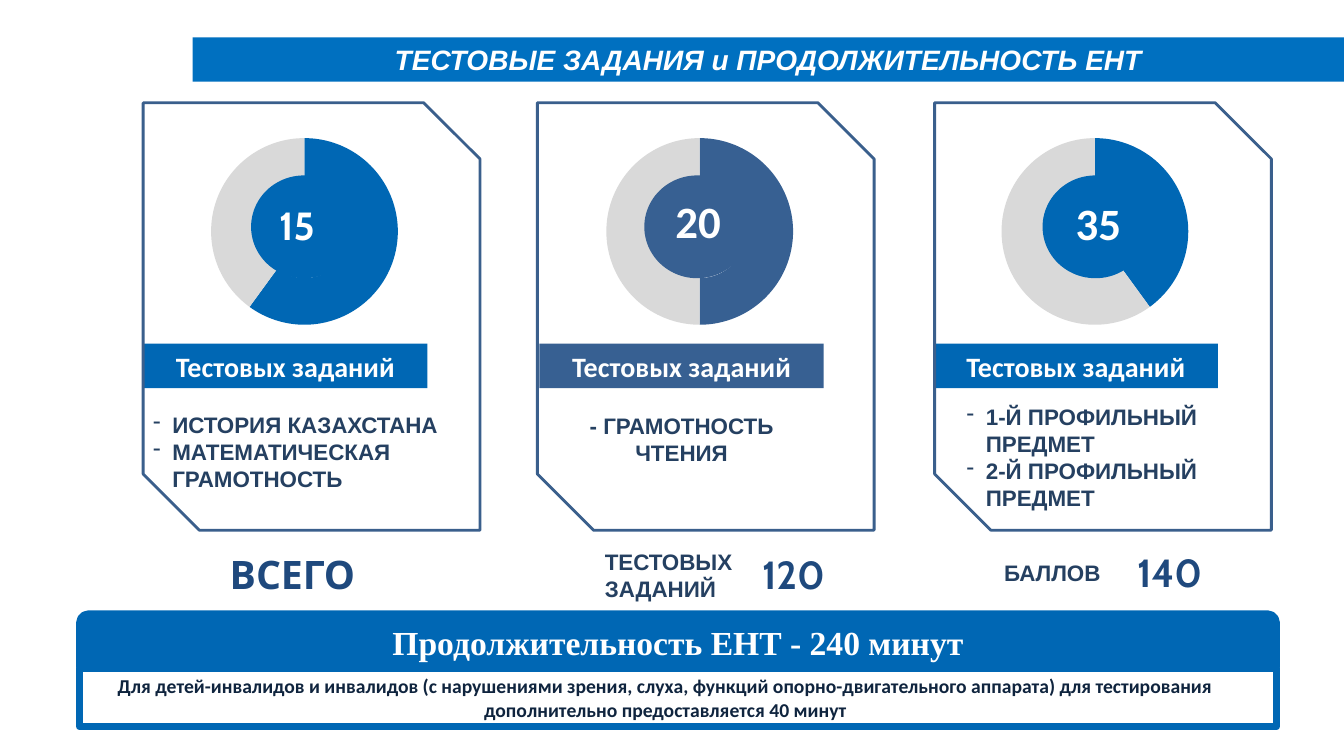
from lxml import etree
from pptx import Presentation
from pptx import util as u
from pptx.chart.data import CategoryChartData
from pptx.dml.color import RGBColor
from pptx.enum import chart as charts, shapes, text
from pptx.oxml import parse_xml
from pptx.oxml.ns import qn

# Content
TITLE = "ТЕСТОВЫЕ ЗАДАНИЯ и ПРОДОЛЖИТЕЛЬНОСТЬ ЕНТ"
BANNER = "Тестовых заданий"
BLUE, SLATE, GREY, WHITE = "0067B4", "376092", "D9D9D9", "FFFFFF"
NAVY, TOTAL, INK, EDGE = "254061", "1F497D", "0F243E", "3A5F8C"

# Number box and subject box are left, top, width, height
PANELS = [
    dict(left=1.42, banner=1.42, ring=2.07, disc=2.49, color=BLUE, share=60,
         number=("15", "Cabin", 28, (2.67, 1.95, 0.68, 0.57)),
         subjects=["ИСТОРИЯ КАЗАХСТАНА", "МАТЕМАТИЧЕСКАЯ ГРАМОТНОСТЬ"],
         box=(1.42, 4.03, 3.11, 0.91), bullets=True),
    dict(left=5.33, banner=5.35, ring=5.99, disc=6.39, color=SLATE, share=50,
         number=("20", "Calibri", 32, (6.39, 1.87, 1.07, 0.64)),
         subjects=["- ГРАМОТНОСТЬ ЧТЕНИЯ"],
         box=(5.35, 4.04, 2.82, 0.64), bullets=False),
    dict(left=9.27, banner=9.26, ring=9.91, disc=10.34, color=BLUE, share=40,
         number=("35", "Calibri", 32, (10.36, 1.89, 1.07, 0.64)),
         subjects=["1-Й ПРОФИЛЬНЫЙ ПРЕДМЕТ", "2-Й ПРОФИЛЬНЫЙ ПРЕДМЕТ"],
         box=(9.49, 3.95, 2.83, 1.18), bullets=True),
]
TOTALS = [
    ("ВСЕГО", (2.18, 5.41, 1.88, 0.57), "Cabin", 28, TOTAL),
    ("ТЕСТОВЫХ ЗАДАНИЙ", (5.9, 5.39, 1.55, 0.64), "Arial", 16, NAVY),
    ("120", (7.46, 5.41, 1.04, 0.57), "Cabin", 28, TOTAL),
    ("БАЛЛОВ", (9.86, 5.5, 1.55, 0.37), "Arial", 16, NAVY),
    ("140", (11.18, 5.39, 1.04, 0.57), "Cabin", 28, TOTAL),
]
DURATION = "Продолжительность ЕНТ - 240 минут"
EXTRA_TIME = ("Для детей-инвалидов и инвалидов (с нарушениями зрения, слуха, "
              "функций опорно-двигательного аппарата) для тестирования "
              "дополнительно предоставляется 40 минут")

LEFT, CENTER = text.PP_ALIGN.LEFT, text.PP_ALIGN.CENTER
TOP, MIDDLE = text.MSO_ANCHOR.TOP, text.MSO_ANCHOR.MIDDLE
SHAPE = shapes.MSO_SHAPE
LAYOUT = ('<c:layout xmlns:c="http://schemas.openxmlformats.org/drawingml/2006/chart">'
          '<c:manualLayout><c:layoutTarget val="inner"/>'
          '<c:xMode val="edge"/><c:yMode val="edge"/><c:x val="0"/><c:y val="0"/>'
          '<c:w val="1"/><c:h val="0.965"/></c:manualLayout></c:layout>')


def rgb(color):
    return RGBColor.from_string(color)


def inches(box):
    return [u.Inches(v) for v in box]


def paint(part, color):
    part.fill.solid()
    part.fill.fore_color.rgb = rgb(color)


def write(sp, lines, font, size, color, align=CENTER, anchor=TOP, italic=False):
    tf = sp.text_frame
    tf.word_wrap = True
    tf.vertical_anchor = anchor
    tf.text = "\n".join(lines)
    for p in tf.paragraphs:
        p.alignment = align
        for r in p.runs:
            r.font.name, r.font.size = font, u.Pt(size)
            r.font.bold, r.font.italic = True, italic
            r.font.color.rgb = rgb(color)
    return tf


def add_text(box, *args, **style):
    return write(slide.shapes.add_textbox(*inches(box)), *args, **style)


def add_block(kind, box, fill=None, line=None, width=0):
    sp = slide.shapes.add_shape(kind, *inches(box))
    sp.shadow.inherit = False
    if fill:
        paint(sp, fill)
    else:
        sp.fill.background()
    if line:
        sp.line.color.rgb = rgb(line)
        sp.line.width = u.Pt(width)
    else:
        sp.line.fill.background()
    return sp


def add_ring(left, share, color):
    data = CategoryChartData()
    data.categories = ["1", "2"]
    data.add_series("Series 1", (share, 100 - share))
    chart = slide.shapes.add_chart(charts.XL_CHART_TYPE.DOUGHNUT,
                                   *inches((left, 1.37, 1.9, 1.92)), data).chart
    chart.has_legend = chart.has_title = False
    chart.font.size, chart.font.name = u.Pt(18), "Calibri"
    plot = chart.plots[0]
    plot.has_data_labels = False
    for i, fill in enumerate((color, GREY)):
        part = plot.series[0].points[i].format
        paint(part, fill)
        part.line.fill.background()
    area = chart._chartSpace.find(".//" + qn("c:plotArea"))
    for old in area.findall(qn("c:layout")):
        area.remove(old)
    area.insert(0, parse_xml(LAYOUT))
    area.find(".//" + qn("c:holeSize")).set("val", "75")


def add_bullets(tf):
    for p in tf.paragraphs:
        pPr = p._p.get_or_add_pPr()
        pPr.set("marL", str(u.Inches(0.19)))
        pPr.set("indent", str(u.Inches(-0.19)))
        etree.SubElement(pPr, qn("a:buChar")).set("char", "-")


prs = Presentation()
prs.slide_width, prs.slide_height = inches((13.33, 7.5))
slide = prs.slides.add_slide(prs.slide_layouts[5])

# Title bar
title = slide.shapes.title
title.left, title.top, title.width, title.height = inches((1.91, 0.37, 11.42, 0.44))
paint(title, "0070C0")
write(title, [TITLE], "Arial", 20, WHITE, anchor=MIDDLE, italic=True)

# Three panels with ring, number, banner and subjects
for panel in PANELS:
    color = panel["color"]
    banner = add_block(SHAPE.RECTANGLE, (panel["banner"], 3.41, 2.82, 0.44), color)
    write(banner, [BANNER], "Calibri", 20, WHITE, anchor=MIDDLE)
    subjects = add_text(panel["box"], panel["subjects"], "Arial", 16, NAVY,
                        align=LEFT if panel["bullets"] else CENTER)
    if panel["bullets"]:
        add_bullets(subjects)
    add_ring(panel["ring"], panel["share"], color)
    add_block(SHAPE.OVAL, (panel["disc"], 1.74, 1.05, 1.02), color)
    number, font, size, box = panel["number"]
    add_text(box, [number], font, size, WHITE, anchor=MIDDLE,
             align=LEFT if font == "Cabin" else CENTER)
    add_block(SHAPE.SNIP_2_DIAG_RECTANGLE, (panel["left"], 1.02, 3.34, 4.24),
              line=EDGE, width=2)

# Totals
for label, box, font, size, color in TOTALS:
    add_text(box, [label], font, size, color, align=LEFT)

# Duration
add_block(SHAPE.RECTANGLE, (0.79, 6.63, 11.87, 0.58), WHITE, BLUE, 5)
header = add_block(SHAPE.ROUND_2_SAME_RECTANGLE, (0.79, 6.09, 11.87, 0.53), BLUE, BLUE, 5)
write(header, [DURATION], "Times New Roman", 24, WHITE)
add_text((0.81, 6.64, 11.58, 0.57), [EXTRA_TIME], "Calibri", 14, INK)

prs.save("out.pptx")
